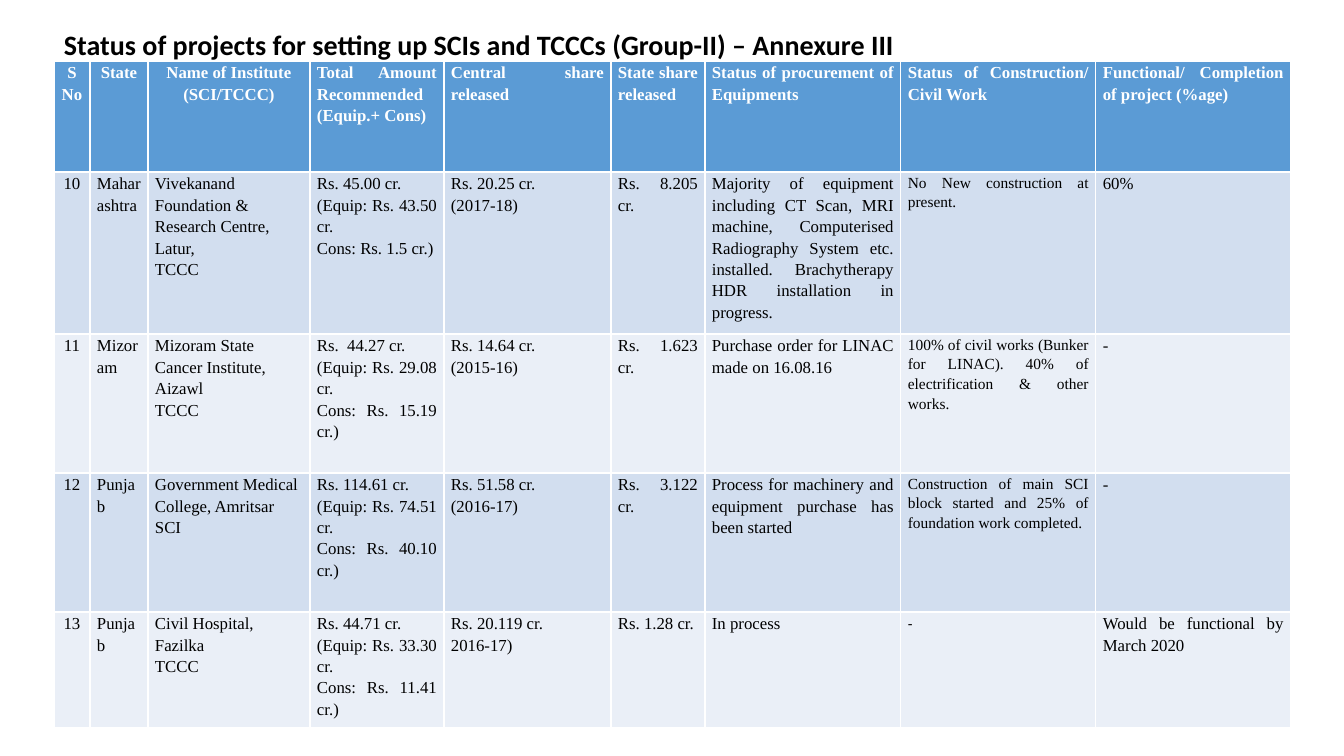
import pptx
import pptx.dml.color
import pptx.enum.text
import pptx.util

EMU_PER_PX = 914400 / 100.8
COLOURS = {
    "text": "000000",
    "header text": "FFFFFF",
    "header": "5B9BD5",
    "dark band": "D2DEEF",
    "light band": "EAEFF7",
}
LEFT = pptx.enum.text.PP_ALIGN.LEFT
CENTRE = pptx.enum.text.PP_ALIGN.CENTER
JUSTIFY = pptx.enum.text.PP_ALIGN.JUSTIFY

COLUMN_WIDTHS = [36, 58, 162, 134, 167, 94, 196, 195, 195]
ROW_HEIGHTS = [111, 162, 139, 139, 116]
HEADER_ALIGNS = [CENTRE] * 3 + [JUSTIFY] * 6
BODY_ALIGNS = [CENTRE, LEFT, LEFT] + [JUSTIFY] * 6
CIVIL_WORK_COLUMN = 7

PROJECTS = [
    ["S No", "State", "Name of Institute\n(SCI/TCCC)",
     "Total Amount Recommended\n(Equip.+ Cons)", "Central share released",
     "State share released", "Status of procurement of Equipments",
     "Status of Construction/ Civil Work",
     "Functional/ Completion of project (%age)"],
    ["10", "Maharashtra",
     "Vivekanand Foundation & Research Centre, Latur,\nTCCC",
     "Rs. 45.00 cr.\n(Equip: Rs. 43.50 cr.\nCons: Rs. 1.5 cr.)",
     "Rs. 20.25 cr.\n(2017-18)", "Rs. 8.205 cr.",
     "Majority of equipment including CT Scan, MRI machine, Computerised "
     "Radiography System etc. installed. Brachytherapy HDR installation in "
     "progress.",
     "No New construction at present.", "60%"],
    ["11", "Mizoram", "Mizoram State Cancer Institute, Aizawl\nTCCC",
     "Rs.  44.27 cr.\n(Equip: Rs. 29.08 cr.\nCons: Rs. 15.19 cr.)",
     "Rs. 14.64 cr.\n(2015-16)", "Rs. 1.623 cr.",
     "Purchase order for LINAC made on 16.08.16",
     "100% of civil works (Bunker for LINAC). 40% of electrification & "
     "other works.", "-"],
    ["12", "Punjab", "Government Medical College, Amritsar\nSCI",
     "Rs. 114.61 cr.\n(Equip: Rs. 74.51 cr.\nCons: Rs. 40.10 cr.)",
     "Rs. 51.58 cr.\n(2016-17)", "Rs. 3.122 cr.",
     "Process for machinery and equipment purchase has been started",
     "Construction of main SCI block started and 25% of foundation work "
     "completed.", "-"],
    ["13", "Punjab", "Civil Hospital, Fazilka\nTCCC",
     "Rs. 44.71 cr.\n(Equip: Rs. 33.30 cr.\nCons: Rs. 11.41 cr.)",
     "Rs. 20.119 cr.\n2016-17)", "Rs. 1.28 cr.", "In process", "-",
     "Would be functional by March 2020"],
]


def px(length):
    return pptx.util.Emu(round(length * EMU_PER_PX))


def colour(name):
    return pptx.dml.color.RGBColor.from_string(COLOURS[name])


def write(frame, text, *, size=12, font="Times New Roman", ink="text",
          bold=False, align=LEFT, spacing=1.15):
    """Fill a text frame, one paragraph for each line of text."""
    for index, line in enumerate(text.split("\n")):
        para = frame.add_paragraph() if index else frame.paragraphs[0]
        para.alignment = align
        para.line_spacing = spacing
        span = para.add_run()
        span.text = line
        span.font.size = pptx.util.Pt(size)
        span.font.name = font
        span.font.bold = bold
        span.font.color.rgb = colour(ink)


class StatusPage:
    def __init__(self, deck):
        self.page = deck.slides.add_slide(deck.slide_layouts[6])

    def title(self, text, left, top, width, height):
        box = self.page.shapes.add_textbox(
            px(left), px(top), px(width), px(height))
        box.text_frame.word_wrap = True
        write(box.text_frame, text, size=20, font="Calibri", bold=True,
              spacing=1.0)

    def table(self, rows, left, top):
        table = self.page.shapes.add_table(
            len(rows), len(COLUMN_WIDTHS), px(left), px(top),
            px(sum(COLUMN_WIDTHS)), px(sum(ROW_HEIGHTS))).table
        for column, width in zip(table.columns, COLUMN_WIDTHS):
            column.width = px(width)
        for row, height in zip(table.rows, ROW_HEIGHTS):
            row.height = px(height)
        for row, texts in enumerate(rows):
            for column, text in enumerate(texts):
                self.cell(table.cell(row, column), text, row, column)

    def cell(self, cell, text, row, column):
        cell.margin_left = cell.margin_right = px(7)
        cell.margin_top = cell.margin_bottom = 0
        cell.fill.solid()
        if row == 0:
            cell.fill.fore_color.rgb = colour("header")
            write(cell.text_frame, text, ink="header text", bold=True,
                  align=HEADER_ALIGNS[column])
            return
        band = "dark band" if row % 2 else "light band"
        cell.fill.fore_color.rgb = colour(band)
        civil_work = column == CIVIL_WORK_COLUMN
        dash = civil_work and text == "-"
        write(cell.text_frame, text, align=BODY_ALIGNS[column],
              size=11 if civil_work else 12,
              font="Calibri" if dash else "Times New Roman")


def main():
    deck = pptx.Presentation()
    deck.slide_width, deck.slide_height = px(1344), px(756)
    status = StatusPage(deck)
    status.table(PROJECTS, 54, 61)
    status.title("Status of projects for setting up SCIs and TCCCs "
                 "(Group-II) – Annexure III", 54, 23, 1237, 75)
    deck.save("out.pptx")


if __name__ == "__main__":
    main()
